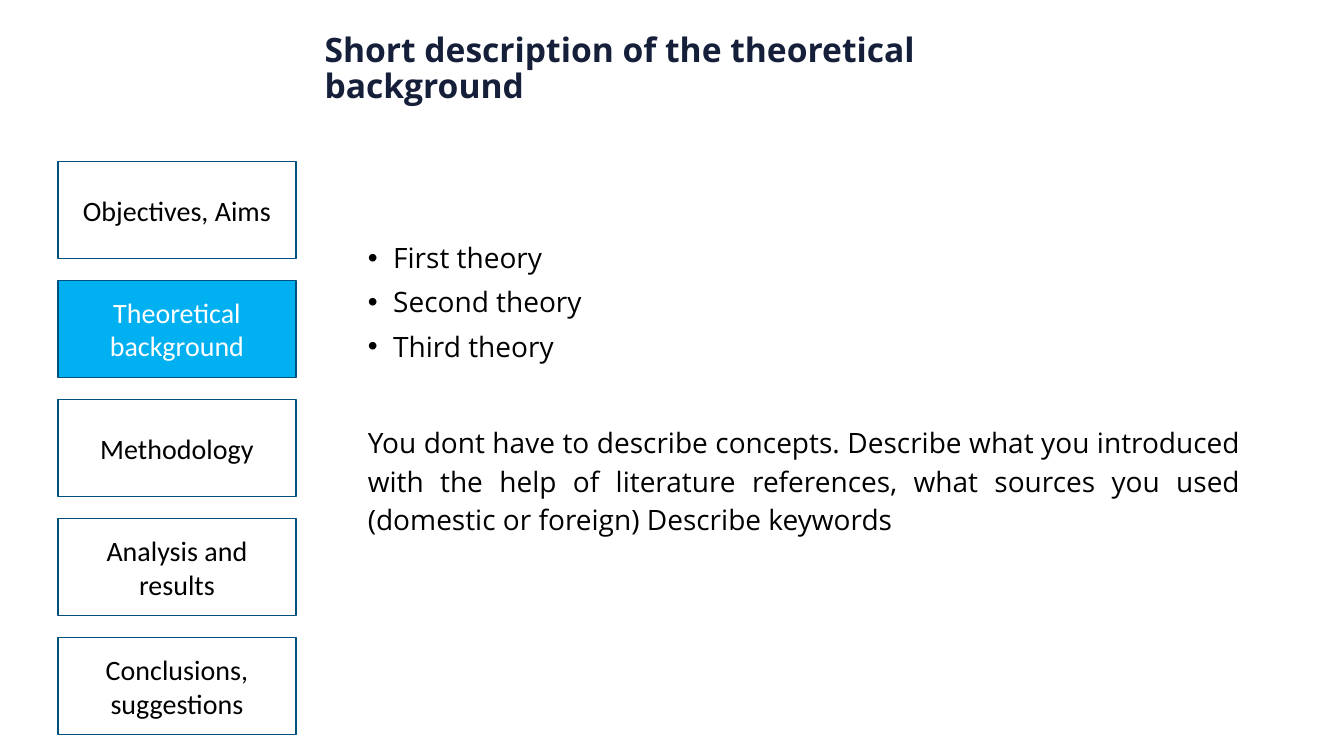
from dataclasses import dataclass

from lxml.etree import SubElement
from pptx import Presentation
from pptx.dml.color import RGBColor
from pptx.enum.shapes import MSO_SHAPE as Preset
from pptx.enum.text import MSO_ANCHOR as Anchor, PP_ALIGN as Align
from pptx.oxml.ns import qn
from pptx.util import Cm, Pt


@dataclass(frozen=True)
class Theme:
    white: str = "FFFFFF"
    black: str = "000000"
    navy: str = "151F39"
    outline: str = "00507D"
    active: str = "00B0F0"
    body_font: str = "Open Sans"
    step_font: str = "Calibri"
    title_size: int = 24
    text_size: int = 20


THEME = Theme()
STEPS = (
    "Objectives, Aims",
    "Theoretical background",
    "Methodology",
    "Analysis and results",
    "Conclusions, suggestions",
)
CURRENT_STEP = "Theoretical background"
THEORIES = ("First theory", "Second theory", "Third theory")
ADVICE = (
    "You dont have to describe concepts. Describe what you introduced with the help "
    "of literature references, what sources you used (domestic or foreign) Describe keywords"
)


def add_bullet(paragraph):
    properties = paragraph._p.get_or_add_pPr()
    properties.set("marL", str(Cm(0.64)))
    properties.set("indent", str(-Cm(0.64)))
    SubElement(properties, qn("a:buFont"), typeface="Arial")
    SubElement(properties, qn("a:buChar"), char="•")


def write(paragraph, text, *, font=THEME.body_font, size=THEME.text_size,
          color=THEME.black, bold=False, align=Align.LEFT, spacing=1.0,
          before=0, bullet=False):
    if bullet:
        add_bullet(paragraph)
    paragraph.alignment = align
    paragraph.line_spacing = spacing
    paragraph.space_before = Pt(before)
    run = paragraph.add_run()
    run.text = text
    run.font.name = font
    run.font.size = Pt(size)
    run.font.bold = bold
    run.font.color.rgb = RGBColor.from_string(color)


def add_text_frame(slide, left, top, width, height, anchor=Anchor.TOP):
    box = slide.shapes.add_textbox(Cm(left), Cm(top), Cm(width), Cm(height))
    frame = box.text_frame
    frame.word_wrap = True
    frame.vertical_anchor = anchor
    return frame


def add_title(slide):
    frame = add_text_frame(slide, 7.93, 0.51, 16.15, 2.29, Anchor.BOTTOM)
    write(frame.paragraphs[0], "Short description of the theoretical background",
          size=THEME.title_size, color=THEME.navy, bold=True, spacing=0.9)


def add_body(slide):
    frame = add_text_frame(slide, 9.02, 4.98, 22.47, 10.24)
    frame.margin_top = Cm(1.18)
    frame.margin_right = Cm(0.23)
    for index, theory in enumerate(THEORIES):
        paragraph = frame.add_paragraph() if index else frame.paragraphs[0]
        write(paragraph, theory, align=Align.JUSTIFY, spacing=0.9,
              before=10 if index else 0, bullet=True)
    write(frame.add_paragraph(), ADVICE, align=Align.JUSTIFY, spacing=1.14, before=41.5)


def add_step(slide, label, top, current):
    shape = slide.shapes.add_shape(
        Preset.ROUNDED_RECTANGLE, Cm(1.46), Cm(top), Cm(6), Cm(2.44))
    shape.adjustments[0] = 0
    shape.shadow.inherit = False
    shape.fill.solid()
    shape.fill.fore_color.rgb = RGBColor.from_string(
        THEME.active if current else THEME.white)
    shape.line.color.rgb = RGBColor.from_string(THEME.outline)
    shape.line.width = Pt(1)
    frame = shape.text_frame
    frame.word_wrap = True
    frame.vertical_anchor = Anchor.MIDDLE
    write(frame.paragraphs[0], label, font=THEME.step_font,
          color=THEME.white if current else THEME.black, align=Align.CENTER)


def main():
    presentation = Presentation()
    presentation.slide_width = Cm(33.87)
    presentation.slide_height = Cm(19.05)
    slide = presentation.slides.add_slide(presentation.slide_layouts[6])
    slide.background.fill.solid()
    slide.background.fill.fore_color.rgb = RGBColor.from_string(THEME.white)
    add_title(slide)
    add_body(slide)
    for index, label in enumerate(STEPS):
        add_step(slide, label, 4.07 + 3 * index, label == CURRENT_STEP)
    presentation.save("out.pptx")


if __name__ == "__main__":
    main()
